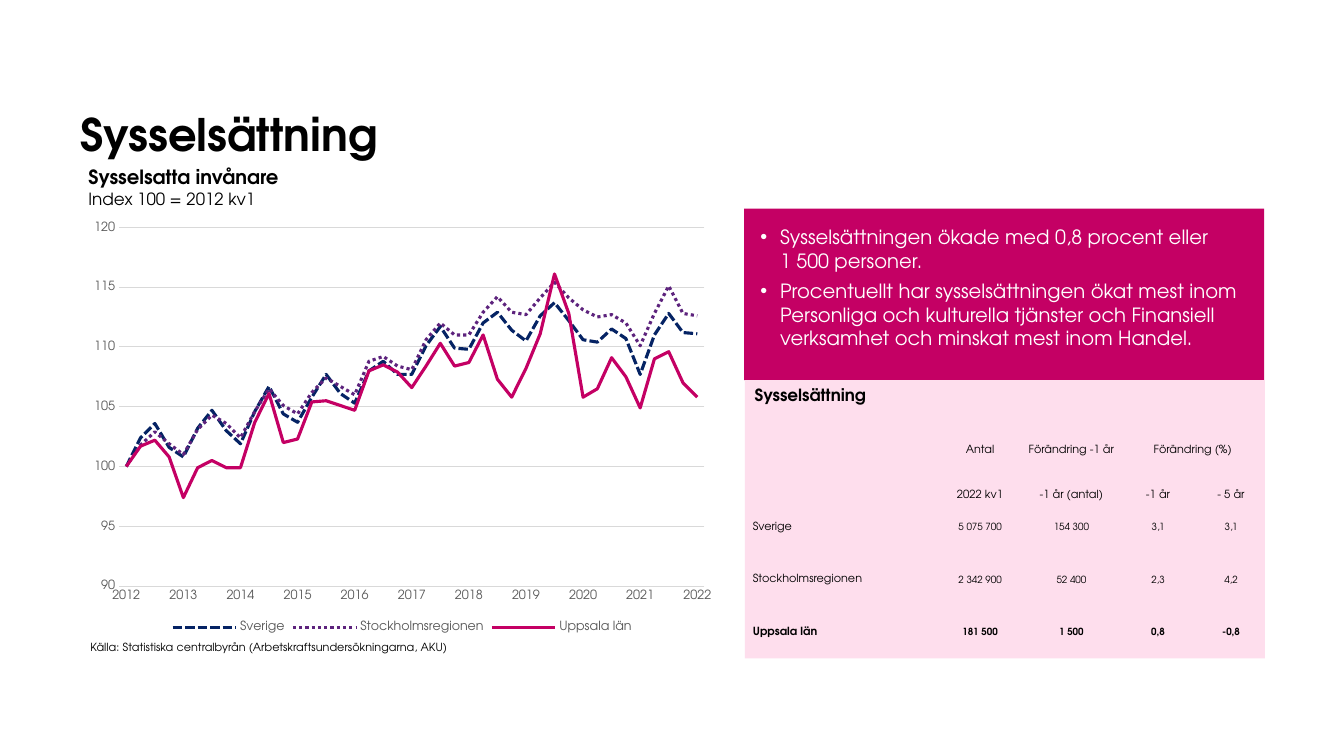
from collections import namedtuple
from dataclasses import dataclass

from lxml import etree
from pptx import Presentation
from pptx.chart.data import CategoryChartData
from pptx.dml.color import RGBColor
from pptx.enum import chart as ch, dml, shapes, text
from pptx.oxml import ns
from pptx.util import Cm, Pt

Box = namedtuple("Box", "left top width height")


@dataclass(frozen=True)
class Theme:
    font: str = "TeX Gyre Adventor"
    black: str = "000000"
    white: str = "FFFFFF"
    grey: str = "595959"
    grid: str = "D9D9D9"
    navy: str = "052364"
    purple: str = "5D237D"
    magenta: str = "C40064"
    pink: str = "FEDEED"
    title: int = 32
    body: int = 14
    heading: int = 12
    axis: int = 9
    label: int = 8
    figure: int = 7


THEME = Theme()

YEARS = range(2012, 2023)
SERIES = {
    "Sverige": (THEME.navy, dml.MSO_LINE.SQUARE_DOT, [
        100, 102.4, 103.6, 101.6, 100.8, 103.2, 104.7, 103, 101.9, 104.6, 106.7,
        104.4, 103.7, 105.8, 107.7, 106.1, 105.3, 108, 108.8, 107.7, 107.7,
        110.1, 111.7, 109.9, 109.8, 112, 112.9, 111.4, 110.5, 112.6, 113.7,
        112.2, 110.6, 110.4, 111.5, 110.7, 107.7, 111, 112.8, 111.2, 111.1]),
    "Stockholmsregionen": (THEME.purple, dml.MSO_LINE.ROUND_DOT, [
        100, 101.8, 102.9, 101.9, 101, 103.1, 104.3, 103.6, 102.4, 104.6, 106.5,
        105.1, 104.4, 106.2, 107.4, 106.7, 106, 108.8, 109.2, 108.4, 108.1,
        110.6, 112, 111, 111, 112.9, 114.2, 112.9, 112.7, 114.1, 115.4, 114.1,
        113.1, 112.5, 112.7, 112, 110.1, 112.8, 115.1, 112.8, 112.6]),
    "Uppsala län": (THEME.magenta, dml.MSO_LINE.SOLID, [
        100, 101.7, 102.2, 100.8, 97.4, 99.9, 100.5, 99.9, 99.9, 103.7, 106.1,
        102, 102.3, 105.4, 105.5, 105.1, 104.7, 108, 108.5, 107.9, 106.6, 108.4,
        110.3, 108.4, 108.7, 111, 107.3, 105.8, 108.2, 111.1, 116.1, 112.8,
        105.8, 106.5, 109.1, 107.5, 104.9, 109, 109.6, 107, 105.8]),
}
BULLETS = [
    "Sysselsättningen ökade med 0,8 procent eller \n1 500 personer.",
    "Procentuellt har sysselsättningen ökat mest inom Personliga och kulturella "
    "tjänster och Finansiell verksamhet och minskat mest inom Handel.",
]
ROWS = [
    ["", "Antal", "Förändring -1 år", "Förändring (%)", ""],
    ["", "2022 kv1", "-1 år (antal)", "-1 år", "- 5 år"],
    ["Sverige", "5 075 700", "154 300", "3,1", "3,1"],
    ["Stockholmsregionen", "2 342 900", "52 400", "2,3", "4,2"],
    ["Uppsala län", "181 500", "1 500", "0,8", "-0,8"],
]
COLUMN_WIDTHS = [4.85, 2.16, 2.44, 1.93, 1.75]
ROW_HEIGHTS = [1.14, 1.14, 1.32, 1.32, 1.32]
HEADER_ROWS = 2


def apply(target, values):
    for name, value in values.items():
        setattr(target, name, value)


def set_font(font, size, color, bold=False):
    apply(font, {"name": THEME.font, "size": Pt(size), "bold": bold})
    font.color.rgb = RGBColor.from_string(color)


def set_line(line, color, width):
    line.color.rgb = RGBColor.from_string(color)
    line.width = Pt(width)


def fill_solid(shape, color):
    shape.fill.solid()
    shape.fill.fore_color.rgb = RGBColor.from_string(color)


def lengths(box):
    return [Cm(value) for value in box]


def place(shape, box):
    apply(shape, dict(zip(box._fields, lengths(box))))


def margins(left, top, right, bottom):
    sides = {"left": left, "top": top, "right": right, "bottom": bottom}
    return {f"margin_{side}": Cm(value) for side, value in sides.items()}


def add_label(slide, box, lines):
    frame = slide.shapes.add_textbox(*lengths(box)).text_frame
    apply(frame, {"word_wrap": False, "auto_size": text.MSO_AUTO_SIZE.SHAPE_TO_FIT_TEXT})
    paragraph = frame.paragraphs[0]
    for index, (wording, size, bold) in enumerate(lines):
        if index:
            paragraph.add_line_break()
        run = paragraph.add_run()
        run.text = wording
        set_font(run.font, size, THEME.black, bold)


def add_title(slide, box):
    title = slide.shapes.title
    place(title, box)
    frame = title.text_frame
    frame.text = "Sysselsättning"
    apply(frame, {"vertical_anchor": text.MSO_ANCHOR.BOTTOM, "word_wrap": True,
                  "auto_size": text.MSO_AUTO_SIZE.NONE, **margins(0, 0, 0, 0)})
    frame.paragraphs[0].alignment = text.PP_ALIGN.LEFT
    set_font(frame.paragraphs[0].font, THEME.title, THEME.black, True)


def add_bullets(slide, box):
    body = slide.placeholders[1]
    place(body, box)
    fill_solid(body, THEME.magenta)
    frame = body.text_frame
    apply(frame, {"vertical_anchor": text.MSO_ANCHOR.TOP, "word_wrap": True,
                  "auto_size": text.MSO_AUTO_SIZE.NONE,
                  **margins(0.41, 0.41, 0.41, 0.41)})
    for index, wording in enumerate(BULLETS):
        paragraph = frame.add_paragraph() if index else frame.paragraphs[0]
        paragraph.text = wording
        properties = paragraph._p.get_or_add_pPr()
        properties.set("marL", str(Cm(0.5)))
        properties.set("indent", str(-Cm(0.5)))
        etree.SubElement(properties, ns.qn("a:buChar"), char="•")
        paragraph.space_before = Pt(5 if index else 0)
        set_font(paragraph.font, THEME.body, THEME.white)
        for run in paragraph.runs:
            set_font(run.font, THEME.body, THEME.white)


def add_employment_table(slide, box):
    panel = slide.shapes.add_shape(shapes.MSO_SHAPE.RECTANGLE, *lengths(box))
    panel.shadow.inherit = False
    fill_solid(panel, THEME.pink)
    panel.line.fill.background()
    add_label(slide, Box(box.left, box.top, 3.35, 0.76),
              [("Sysselsättning", THEME.heading, True)])

    height = sum(ROW_HEIGHTS)
    table_box = Box(box.left, box.top + box.height - height, box.width, height)
    table = slide.shapes.add_table(len(ROWS), len(COLUMN_WIDTHS), *lengths(table_box)).table
    apply(table, {"first_row": False, "horz_banding": False})
    style = table._tbl.tblPr.find(ns.qn("a:tableStyleId"))
    style.text = "{2D5ABB26-0587-4C30-8999-92F81FD0307C}"
    for column, width in zip(table.columns, COLUMN_WIDTHS):
        column.width = Cm(width)
    for row, row_height in zip(table.rows, ROW_HEIGHTS):
        row.height = Cm(row_height)

    for r, row in enumerate(ROWS):
        header = r < HEADER_ROWS
        anchor = text.MSO_ANCHOR.BOTTOM if header else text.MSO_ANCHOR.MIDDLE
        for c, wording in enumerate(row):
            cell = table.cell(r, c)
            cell.fill.background()
            inset = margins(0.03, 0.03, 0.03, 0) if c else margins(0.2, 0, 0, 0)
            apply(cell, {"text": wording, "vertical_anchor": anchor, **inset})
            paragraph = cell.text_frame.paragraphs[0]
            paragraph.alignment = text.PP_ALIGN.CENTER if c else text.PP_ALIGN.LEFT
            size = THEME.label if header or not c else THEME.figure
            set_font(paragraph.font, size, THEME.black, r == len(ROWS) - 1)
            for run in paragraph.runs:
                set_font(run.font, size, THEME.black, r == len(ROWS) - 1)
    table.cell(0, 3).merge(table.cell(0, 4))


def add_index_chart(slide, box):
    data = CategoryChartData()
    quarters = [label for year in YEARS for label in (str(year), "", "", "")]
    data.categories = quarters[:-3]
    for name, (_, _, values) in SERIES.items():
        data.add_series(name, values)
    chart = slide.shapes.add_chart(ch.XL_CHART_TYPE.LINE, *lengths(box), data).chart
    apply(chart, {"has_title": False, "has_legend": True})
    set_font(chart.font, 10, THEME.black)
    apply(chart.legend, {"position": ch.XL_LEGEND_POSITION.BOTTOM, "include_in_layout": False})
    set_font(chart.legend.font, THEME.axis, THEME.grey)

    plot = chart.plots[0]
    plot.vary_by_categories = False
    for series, (color, dash, _) in zip(plot.series, SERIES.values()):
        series.smooth = False
        set_line(series.format.line, color, 2.25)
        series.format.line.dash_style = dash

    no_ticks = {"major_tick_mark": ch.XL_TICK_MARK.NONE, "minor_tick_mark": ch.XL_TICK_MARK.NONE}
    for axis in (chart.category_axis, chart.value_axis):
        apply(axis, no_ticks)
        set_font(axis.tick_labels.font, THEME.axis, THEME.grey)
    set_line(chart.category_axis.format.line, THEME.grid, 0.75)
    apply(chart.value_axis, {"minimum_scale": 90, "maximum_scale": 120,
                             "major_unit": 5, "has_major_gridlines": True})
    chart.value_axis.format.line.fill.background()
    set_line(chart.value_axis.major_gridlines.format.line, THEME.grid, 0.75)

    area = plot._element.getparent()
    for old in area.findall(ns.qn("c:layout")):
        area.remove(old)
    layout = etree.Element(ns.qn("c:layout"))
    area.insert(0, layout)
    manual = etree.SubElement(layout, ns.qn("c:manualLayout"))
    for tag, value in {"layoutTarget": "inner", "xMode": "edge", "yMode": "edge",
                       "x": 0.06, "y": 0.03, "w": 0.91, "h": 0.85}.items():
        etree.SubElement(manual, ns.qn(f"c:{tag}"), val=str(value))


def main():
    deck = Presentation()
    apply(deck, {"slide_width": Cm(33.87), "slide_height": Cm(19.05)})
    slide = deck.slides.add_slide(deck.slide_layouts[1])
    add_title(slide, Box(2.03, 0.94, 23.42, 3.1))
    add_bullets(slide, Box(18.75, 5.26, 13.11, 4.32))
    add_employment_table(slide, Box(18.77, 9.58, 13.11, 7.01))
    add_index_chart(slide, Box(2.03, 5.41, 16.21, 10.64))
    add_label(slide, Box(1.98, 4.04, 5.38, 1.37),
              [("Sysselsatta invånare", THEME.body, True),
               ("Index 100 = 2012 kv1", THEME.heading, False)])
    add_label(slide, Box(2.03, 16, 9.83, 0.61),
              [("Källa: Statistiska centralbyrån (Arbetskraftsundersökningarna, AKU)",
                THEME.label, False)])
    deck.save("out.pptx")


if __name__ == "__main__":
    main()
